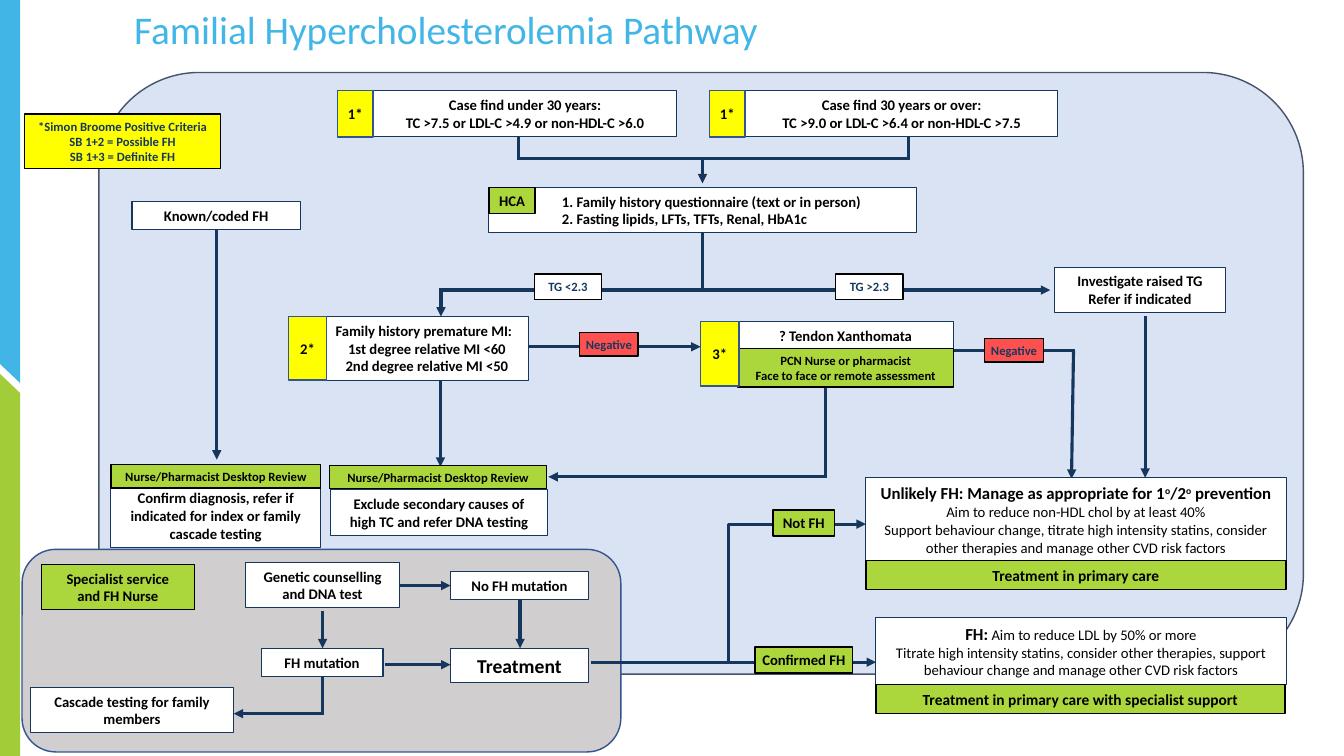
from itertools import pairwise

from lxml.etree import SubElement
from pptx import Presentation
from pptx.dml.color import RGBColor as Rgb
from pptx.enum.shapes import MSO_CONNECTOR as Link, MSO_SHAPE as Form
from pptx.enum.text import MSO_ANCHOR as Anchor, PP_ALIGN as Align
from pptx.oxml.ns import qn
from pptx.util import Pt

# Colours and box styles
HUES = {
    "sky": "41B6E6", "leaf": "A3CD38", "pale": "DAE3F3", "grey": "D0CECE",
    "slate": "44546A", "blue": "325491", "navy": "15375D", "ink": "16385E",
    "white": "FFFFFF", "black": "000000", "yellow": "FFFF00",
    "lime": "ACD73C", "red": "FF5050", "title": "42B6E6",
}
# fill, edge, edge width, text size, text colour, side margin
STYLES = {
    "step": ("white", "navy", 0.75, 10.5, "black", 7.2),
    "main": ("white", "navy", 0.75, 14, "black", 7.2),
    "bar": ("lime", "black", 1, 11, "black", 7.2),
    "team": ("lime", "black", 1, 10.5, "black", 2.9),
    "role": ("lime", "black", 1, 9, "black", 2.9),
    "note": ("yellow", "black", 1, 9, "ink", 2.9),
    "mark": ("yellow", "blue", 1, 10.5, "black", 2.9),
    "no": ("red", "black", 1, 9, "ink", 2.9),
    "test": ("white", "black", 1, 9, "ink", 2.9),
}

# Content: a line is a string, or a list of (text, run format)
TITLE = "Familial Hypercholesterolemia Pathway"
BIG, UP, LIGHT = {"size": 12}, {"size": 12, "raised": True}, {"bold": False}
UNLIKELY = [
    [("Unlikely FH: Manage as appropriate for 1", BIG), ("o", UP), ("/2", BIG),
     ("o", UP), (" prevention", BIG)],
    [("Aim to reduce non-HDL chol by at least 40%", LIGHT)],
    [("Support behaviour change, titrate high intensity statins, consider "
      "other therapies and manage other CVD risk factors", LIGHT)],
]
LIKELY = [
    [("FH:", BIG), (" ", {}), ("Aim to reduce LDL by 50% or more", LIGHT)],
    [("Titrate high intensity statins, consider other therapies, support "
      "behaviour change and manage other CVD risk factors", LIGHT)],
]
REVIEW = ["Nurse/Pharmacist Desktop Review"]

STRIPS = [
    ("sky", [(0, 0), (14.4, 0), (14.4, 273.6), (0, 260)]),
    ("leaf", [(0, 267), (14.4, 280.8), (14.4, 540), (0, 540)]),
]
PANELS = [
    ("pale", "slate", (70.6, 51.8, 860.4, 429.8)),
    ("grey", "blue", (15.8, 392.4, 427.7, 144.7)),
]
# style, left, top, width, height, lines
BOXES = [
    ("note", 17.3, 81.4, 140.4, 38.9,
     ["*Simon Broome Positive Criteria", "SB 1+2 = Possible FH", "SB 1+3 = Definite FH"]),
    ("step", 267.1, 64.8, 216, 32.4,
     ["Case find under 30 years:", "TC >7.5 or LDL-C >4.9 or non-HDL-C >6.0"]),
    ("step", 532.8, 64.8, 222.5, 32.4,
     ["Case find 30 years or over:", "TC >9.0 or LDL-C >6.4 or non-HDL-C >7.5"]),
    ("step", 349.2, 133.9, 305.3, 32.4,
     ["1. Family history questionnaire (text or in person)",
      "2. Fasting lipids, LFTs, TFTs, Renal, HbA1c"], {"lead": 52.2, "left": (0, 1)}),
    ("step", 175.7, 401.8, 109.4, 32.4, ["Genetic counselling and DNA test"]),
    ("step", 186.5, 463, 87.1, 20.2, ["FH mutation"]),
    ("step", 321.8, 408.2, 98.6, 20.2, ["No FH mutation"]),
    ("step", 753.1, 190.8, 122.4, 32.4, ["Investigate raised TG", "Refer if indicated"]),
    ("team", 29.5, 403.2, 109.4, 32.4, ["Specialist service", "and FH Nurse"]),
    ("step", 94.3, 144, 120.2, 20.2, ["Known/coded FH"]),
    ("step", 21.6, 491, 145.4, 32.4, ["Cascade testing for family members"]),
    ("main", 321.8, 463, 98.6, 24.5, ["Treatment"]),
    ("step", 618.5, 341.3, 300.2, 59.8, UNLIKELY),
    ("step", 625.7, 441.4, 293, 47.5, LIKELY),
    ("step", 79.2, 345.6, 149.8, 45.4,
     ["Confirm diagnosis, refer if indicated for index or family cascade testing"]),
    ("step", 236.2, 349.9, 154.8, 32.4,
     ["Exclude secondary causes of high TC and refer DNA testing"]),
    ("bar", 618.5, 400.3, 300.2, 20.9, ["Treatment in primary care"]),
    ("bar", 625.7, 488.9, 292.3, 20.9, ["Treatment in primary care with specialist support"]),
    ("step", 527, 229.7, 154.1, 20.2, ["? Tendon Xanthomata"]),
    ("role", 527, 249.1, 154.1, 27.4,
     ["PCN Nurse or pharmacist", "Face to face or remote assessment"]),
    ("team", 349.2, 133.9, 33.1, 18.7, ["HCA"]),
    ("role", 79.2, 331.9, 149.8, 16.6, REVIEW),
    ("role", 235.4, 332.6, 154.8, 16.6, REVIEW),
    ("team", 552.2, 364.3, 43.9, 18.7, ["Not FH"]),
    ("team", 539.3, 462.2, 69.8, 18.7, ["Confirmed FH"]),
    ("step", 232.6, 226.1, 144.7, 45.4,
     ["Family history premature MI:", "1st degree relative MI <60",
      "2nd degree relative MI <50"], {"left": (0,)}),
    ("no", 414, 237.6, 41.8, 16.6, ["Negative"]),
    ("no", 703.4, 241.9, 41.8, 16.6, ["Negative"]),
    ("test", 381.6, 195.8, 48.2, 18, ["TG <2.3"]),
    ("test", 596.9, 195.8, 48.2, 18, ["TG >2.3"]),
    ("mark", 205.9, 226.1, 27.4, 45.4, ["2*"]),
    ("mark", 500.4, 229.7, 27.4, 46.1, ["3*"]),
    ("mark", 241.2, 64.8, 25.2, 33.1, ["1*"]),
    ("mark", 506.9, 64.8, 25.2, 33.1, ["1*"]),
]
# Corner points of each route; the last point gets the arrowhead
FORK = [(370.5, 98.6), (370.5, 113), (648.7, 113), (648.7, 98.6)]
ROUTES = [
    [(501.8, 113), (501.8, 131)],
    [(502, 166.3), (502, 207.2), (750.2, 207.2)],
    [(502, 207.2), (315, 207.2), (315, 226.1)],
    [(818, 226), (818, 341.3)],
    [(371.5, 428.4), (371.5, 463)],
    [(230.4, 436.3), (230.4, 463)],
    [(314.6, 262.8), (314.6, 333.4)],
    [(154.8, 163.4), (154.8, 328.3)],
    [(285.1, 418.3), (321.8, 418.3)],
    [(230.4, 483.1), (230.4, 509.8), (167, 509.8)],
    [(275, 474.8), (321.8, 474.8)],
    [(519.8, 473), (625.7, 473)],
    [(681.1, 250.6), (766.8, 250.6), (765.4, 342)],
    [(377.3, 247.7), (500.4, 247.7)],
    [(589.7, 276.5), (589.7, 340.6), (391.7, 340.6)],
]
ELBOW = [(421.9, 473), (618.5, 374.4)]


def hue(name):
    return Rgb.from_string(HUES[name])


def write(frame, lines, size=10.5, color="black", bold=True, side=7.2, lead=None,
          left=(), anchor=Anchor.MIDDLE, space=None):
    frame.word_wrap = True
    frame.vertical_anchor = anchor
    frame.margin_left, frame.margin_right = Pt(lead or side), Pt(side)
    frame.margin_top = frame.margin_bottom = Pt(min(side, 3.6))
    for i, line in enumerate(lines):
        para = frame.paragraphs[0] if i == 0 else frame.add_paragraph()
        para.alignment = Align.LEFT if i in left else Align.CENTER
        if space:
            para.line_spacing = space
        for words, look in [(line, {})] if isinstance(line, str) else line:
            run = para.add_run()
            run.text = words
            font = run.font
            font.name, font.size = "Calibri", Pt(look.get("size", size))
            font.bold = look.get("bold", bold)
            font.color.rgb = hue(color)
            if look.get("raised"):
                run._r.get_or_add_rPr().set("baseline", "30000")


def paint(shape, fill, edge=None, width=1):
    shape.shadow.inherit = False
    shape.fill.solid()
    shape.fill.fore_color.rgb = hue(fill)
    if edge:
        shape.line.color.rgb = hue(edge)
        shape.line.width = Pt(width)
    else:
        shape.line.fill.background()


def join(shapes, start, end, arrow, form=Link.STRAIGHT):
    wire = shapes.add_connector(form, *map(Pt, start + end))
    wire.line.color.rgb = hue("navy")
    wire.line.width = Pt(2.25)
    props = wire._element.spPr
    edge = props.find(qn("a:ln"))
    if arrow:
        SubElement(edge, qn("a:tailEnd"), type="triangle")
    else:
        edge.set("cap", "sq")
    SubElement(props, qn("a:effectLst"))


def main():
    deck = Presentation()
    deck.slide_width, deck.slide_height = Pt(960), Pt(540)
    slide = deck.slides.add_slide(deck.slide_layouts[5])
    shapes = slide.shapes

    # Title
    head = shapes.title
    head.left, head.top, head.width, head.height = map(Pt, (88.6, 4.3, 748, 43.2))
    write(head.text_frame, [TITLE], size=28, color="title", bold=False,
          left=(0,), anchor=Anchor.TOP, space=0.9)

    # Side strips and panels
    for fill, (first, *rest) in STRIPS:
        pen = shapes.build_freeform(*map(Pt, first))
        pen.add_line_segments([(Pt(x), Pt(y)) for x, y in rest], close=True)
        paint(pen.convert_to_shape(), fill)
    for fill, edge, area in PANELS:
        paint(shapes.add_shape(Form.ROUNDED_RECTANGLE, *map(Pt, area)), fill, edge)

    # Arrows
    for start, end in pairwise(FORK):
        join(shapes, start, end, False)
    for route in ROUTES:
        for start, end in pairwise(route):
            join(shapes, start, end, end == route[-1])
    join(shapes, *ELBOW, True, Link.ELBOW)

    # Boxes
    for style, x, y, w, h, lines, *more in BOXES:
        fill, edge, width, size, color, side = STYLES[style]
        box = shapes.add_shape(Form.RECTANGLE, Pt(x), Pt(y), Pt(w), Pt(h))
        paint(box, fill, edge, width)
        write(box.text_frame, lines, size=size, color=color, side=side,
              **(more[0] if more else {}))

    deck.save("out.pptx")


if __name__ == "__main__":
    main()
